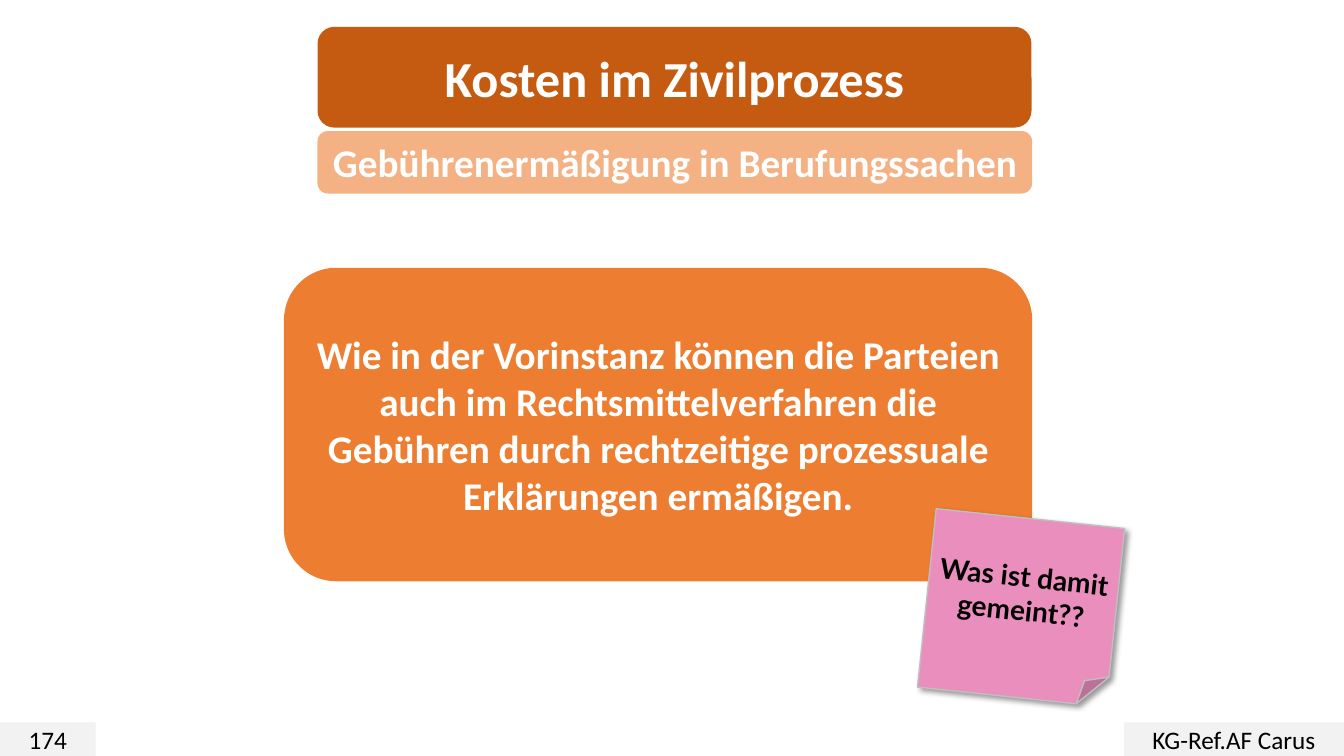
import pptx
import pptx.util
import pptx.dml.color
import pptx.enum.shapes
import pptx.enum.text
import pptx.oxml
import pptx.oxml.ns

RGBColor = pptx.dml.color.RGBColor
SHAPE = pptx.enum.shapes.MSO_SHAPE

WHITE = RGBColor(0xFF, 0xFF, 0xFF)
BLACK = RGBColor(0x00, 0x00, 0x00)
LIGHT_GREY = RGBColor(0xF2, 0xF2, 0xF2)
BORDER_GREY = RGBColor(0xBF, 0xBF, 0xBF)
DARK_ORANGE = RGBColor(0xC5, 0x5A, 0x11)
PALE_ORANGE = RGBColor(0xF4, 0xB1, 0x83)
ORANGE = RGBColor(0xED, 0x7D, 0x31)
PINK = RGBColor(0xEA, 0x8E, 0xBE)

# Slide grid: one cell is a third of an inch
WIDTH = pptx.util.Inches(13.33)
HEIGHT = pptx.util.Inches(7.5)
COLUMN = WIDTH / 40
ROW = HEIGHT / 22.5

# Text formats
FOOTER = {"name": "Calibri", "size": pptx.util.Pt(18), "bold": False}
TITLE = {"name": "Calibri", "size": pptx.util.Pt(36), "bold": True}
STATEMENT = {"name": "Calibri", "size": pptx.util.Pt(28), "bold": True}
NOTE = {"name": "Lato", "size": pptx.util.Pt(20), "bold": True}


def write_text(box, text, font_format, colour):
    """Write one centred paragraph into the box."""
    frame = box.text_frame
    inset = pptx.util.Inches(0.05)
    frame_format = {
        "word_wrap": True,
        "vertical_anchor": pptx.enum.text.MSO_ANCHOR.MIDDLE,
        "margin_left": inset,
        "margin_right": inset,
        "margin_top": inset,
        "margin_bottom": inset,
    }
    for name, value in frame_format.items():
        setattr(frame, name, value)
    para = frame.paragraphs[0]
    para.alignment = pptx.enum.text.PP_ALIGN.CENTER
    span = para.add_run()
    span.text = text
    for name, value in font_format.items():
        setattr(span.font, name, value)
    span.font.color.rgb = colour


def add_box(page, kind, place, fill, text, font_format, colour):
    """Add a filled box; place is left, top, width, height in grid cells."""
    left, top, width, height = place
    box = page.shapes.add_shape(
        kind, round(left * COLUMN), round(top * ROW),
        round(width * COLUMN), round(height * ROW))
    box.shadow.inherit = False
    box.fill.solid()
    box.fill.fore_color.rgb = fill
    box.line.fill.background()
    write_text(box, text, font_format, colour)
    return box


def add_drop_shadow(box):
    """Give the box a soft shadow towards the lower right."""
    effects = box._element.spPr.find(pptx.oxml.ns.qn("a:effectLst"))
    effects.append(pptx.oxml.parse_xml(
        f'<a:outerShdw {pptx.oxml.ns.nsdecls("a")} blurRad="{pptx.util.Pt(4)}" '
        f'dist="{pptx.util.Pt(3)}" dir="2700000" algn="tl" rotWithShape="0">'
        '<a:srgbClr val="000000"><a:alpha val="40000"/></a:srgbClr>'
        '</a:outerShdw>'))


def add_sticky_note(page, place, text):
    """Add a tilted paper note with a folded corner."""
    note = add_box(page, SHAPE.FOLDED_CORNER, place, PINK, text, NOTE, BLACK)
    note.rotation = 6
    note.line.color.rgb = BORDER_GREY
    note.line.width = pptx.util.Pt(1)
    add_drop_shadow(note)


def main():
    deck = pptx.Presentation()
    deck.slide_width = WIDTH
    deck.slide_height = HEIGHT
    page = deck.slides.add_slide(deck.slide_layouts[6])

    # Footer: page number and author
    for left, width, text in ((0, 2.85, "174"), (33.45, 6.55, "KG-Ref.AF Carus")):
        add_box(page, SHAPE.RECTANGLE, (left, 21.5, width, 1), LIGHT_GREY,
                text, FOOTER, BLACK)

    # Title, subtitle and statement
    banners = (
        ((9.45, 0.8, 21.25, 3), DARK_ORANGE, "Kosten im Zivilprozess", TITLE),
        ((9.45, 3.9, 21.27, 1.86), PALE_ORANGE,
         "Gebührenermäßigung in Berufungssachen", STATEMENT),
        ((8.45, 7.97, 22.27, 9.33), ORANGE,
         "Wie in der Vorinstanz können die Parteien auch im "
         "Rechtsmittelverfahren die Gebühren durch rechtzeitige "
         "prozessuale Erklärungen ermäßigen.", STATEMENT),
    )
    for place, fill, text, font_format in banners:
        add_box(page, SHAPE.ROUNDED_RECTANGLE, place, fill, text, font_format, WHITE)

    # Question on the sticky note
    add_sticky_note(page, (27.57, 15.42, 5.64, 5.34), "Was ist damit gemeint??")

    deck.save("out.pptx")


if __name__ == "__main__":
    main()
